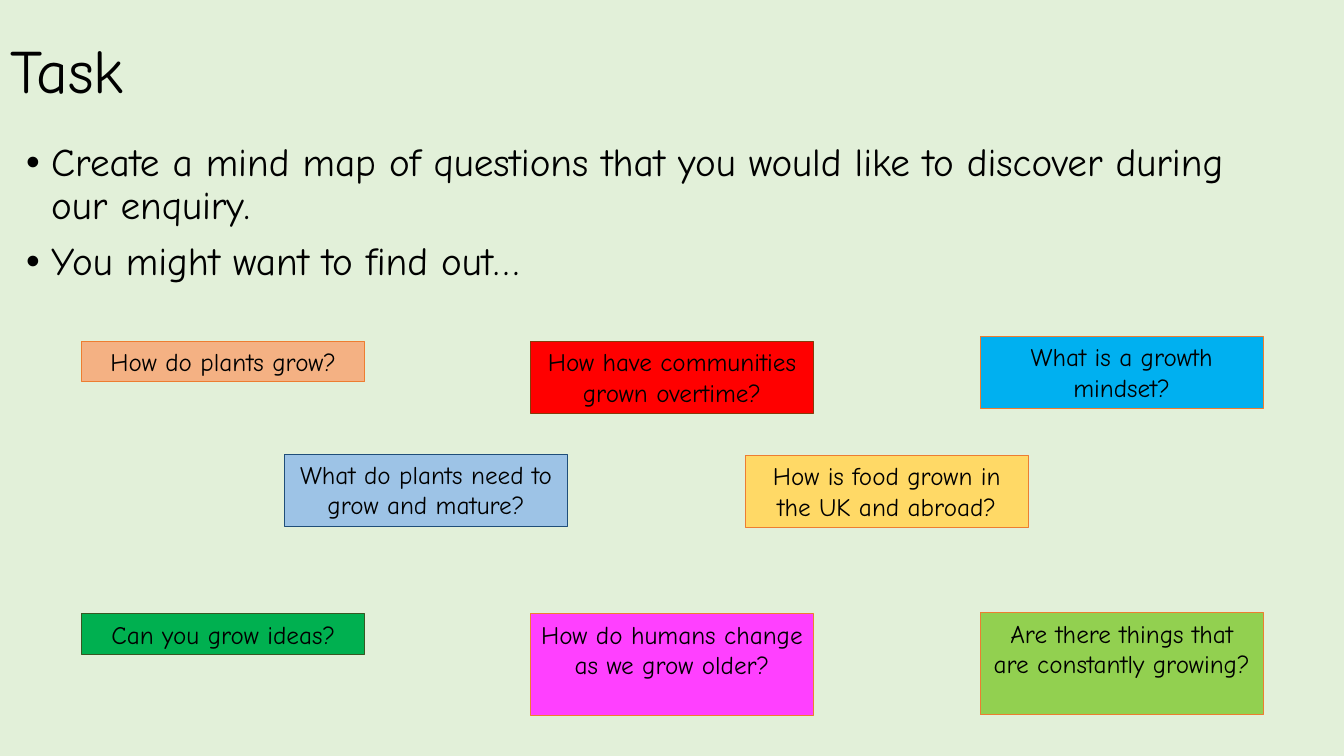
from dataclasses import dataclass

import pptx
import pptx.dml.color
import pptx.enum.shapes
import pptx.enum.text
import pptx.oxml.ns
import pptx.util
from lxml import etree
from pptx.enum.text import MSO_ANCHOR, MSO_AUTO_SIZE, PP_ALIGN

EMU_PER_PX = 9144  # 100 px to the inch
FONT = "Comic Neue"
BLACK = "000000"
ORANGE = "ED7D31"
CARD_WIDTH = 281
ONE_LINE, TWO_LINES, THREE_LINES = 40, 71, 101
LEFT, CENTRE, RIGHT = 81, 526, 972


@dataclass(frozen=True)
class Question:
    text: str
    left: int
    top: int
    height: int
    fill: str
    border: str = ORANGE


QUESTIONS = [
    Question("How do plants grow?", LEFT, 339, ONE_LINE, "F4B183"),
    Question("What do plants need to grow and mature?", 282, 451, TWO_LINES, "9DC3E6", "1F4E79"),
    Question("How have communities grown overtime?", CENTRE, 339, TWO_LINES, "FF0000", "843C0B"),
    Question("What is a growth mindset?", RIGHT, 334, TWO_LINES, "00B0F0"),
    Question("How is food grown in the UK and abroad?", 739, 452, TWO_LINES, "FFD966"),
    Question("Can you grow ideas?", LEFT, 609, ONE_LINE, "00B050", "385723"),
    Question("How do humans change as we grow older?", CENTRE, 609, THREE_LINES, "FF40FF"),
    Question("Are there things that are constantly growing?", RIGHT, 608, THREE_LINES, "92D050"),
]
INSTRUCTIONS = [
    "Create a mind map of questions that you would like to discover during our enquiry.",
    "You might want to find out…",
]


def px(length: int) -> pptx.util.Emu:
    return pptx.util.Emu(length * EMU_PER_PX)


def rgb(colour: str) -> pptx.dml.color.RGBColor:
    return pptx.dml.color.RGBColor.from_string(colour)


def add_text(paragraph, text: str, size: int) -> None:
    run = paragraph.add_run()
    run.text = text
    run.font.name = FONT
    run.font.size = pptx.util.Pt(size)
    run.font.color.rgb = rgb(BLACK)


def set_frame(frame, anchor: MSO_ANCHOR) -> None:
    frame.word_wrap = True
    frame.auto_size = MSO_AUTO_SIZE.NONE
    frame.vertical_anchor = anchor


def add_bullet(paragraph) -> None:
    properties = paragraph._p.get_or_add_pPr()
    properties.set("marL", str(px(25)))
    properties.set("indent", str(px(-25)))
    bullet_font = etree.SubElement(properties, pptx.oxml.ns.qn("a:buFont"))
    bullet_font.set("typeface", "Arial")
    bullet = etree.SubElement(properties, pptx.oxml.ns.qn("a:buChar"))
    bullet.set("char", "•")


def add_heading(slide) -> None:
    heading = slide.shapes.title
    heading.left, heading.top, heading.width, heading.height = px(0), px(0), px(1150), px(145)
    set_frame(heading.text_frame, MSO_ANCHOR.MIDDLE)
    paragraph = heading.text_frame.paragraphs[0]
    paragraph.alignment = PP_ALIGN.LEFT
    paragraph.line_spacing = 0.9
    add_text(paragraph, "Task", 44)


def add_instructions(slide) -> None:
    frame = slide.shapes.add_textbox(px(16), px(137), px(1260), px(177)).text_frame
    set_frame(frame, MSO_ANCHOR.TOP)
    for index, instruction in enumerate(INSTRUCTIONS):
        paragraph = frame.add_paragraph() if index else frame.paragraphs[0]
        add_bullet(paragraph)
        paragraph.line_spacing = 0.9
        paragraph.space_before = pptx.util.Pt(10 if index else 0)
        add_text(paragraph, instruction, 28)


def add_question(slide, question: Question) -> None:
    card = slide.shapes.add_shape(
        pptx.enum.shapes.MSO_SHAPE.RECTANGLE,
        px(question.left), px(question.top), px(CARD_WIDTH), px(question.height),
    )
    card.shadow.inherit = False
    card.fill.solid()
    card.fill.fore_color.rgb = rgb(question.fill)
    card.line.color.rgb = rgb(question.border)
    card.line.width = pptx.util.Pt(0.75)
    set_frame(card.text_frame, MSO_ANCHOR.TOP)
    paragraph = card.text_frame.paragraphs[0]
    paragraph.alignment = PP_ALIGN.CENTER
    add_text(paragraph, question.text, 18)


def main() -> None:
    presentation = pptx.Presentation()
    presentation.slide_width = px(1333)
    presentation.slide_height = px(750)
    slide = presentation.slides.add_slide(presentation.slide_layouts.get_by_name("Title Only"))
    slide.background.fill.solid()
    slide.background.fill.fore_color.rgb = rgb("E2F0D9")
    add_heading(slide)
    add_instructions(slide)
    for question in QUESTIONS:
        add_question(slide, question)
    presentation.save("out.pptx")


if __name__ == "__main__":
    main()
